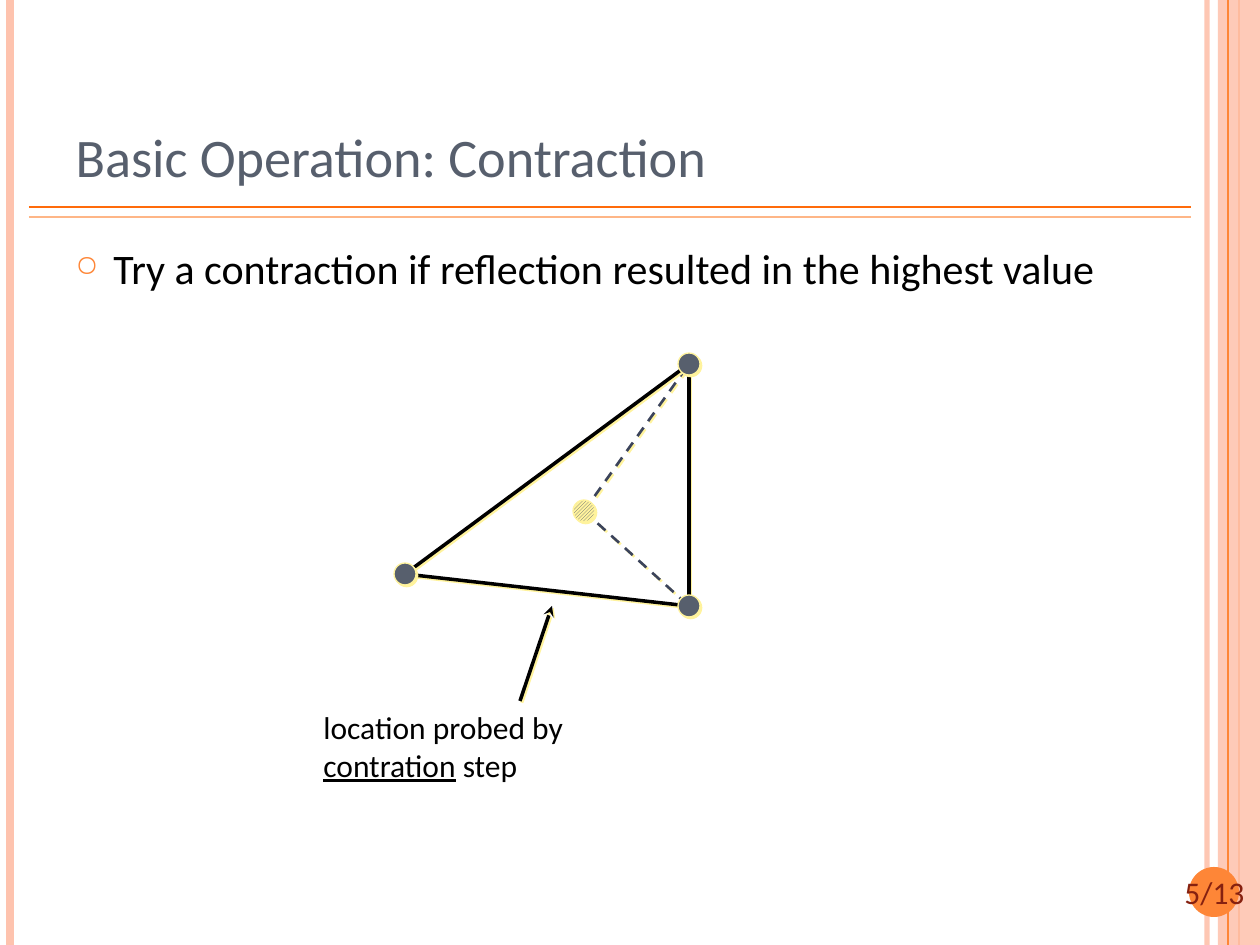
from dataclasses import dataclass
from itertools import combinations

from lxml.etree import SubElement
from pptx import Presentation
from pptx.dml.color import RGBColor
from pptx.enum.dml import MSO_LINE, MSO_PATTERN
from pptx.enum.shapes import MSO_CONNECTOR, MSO_SHAPE
from pptx.enum.text import MSO_ANCHOR, MSO_AUTO_SIZE, PP_ALIGN
from pptx.oxml.ns import qn
from pptx.util import Emu, Pt

PX_PER_INCH = 126
WIDTH, HEIGHT = 1260, 945
TITLE_ONLY = 5


@dataclass(frozen=True)
class Theme:
    font: str = "Calibri"
    title_size: int = 31
    body_size: int = 24
    label_size: int = 18
    title: str = "575F6D"
    text: str = "000000"
    number: str = "862110"
    accent: str = "FE8637"
    accent_dark: str = "FF6B0A"
    accent_light: str = "FEB687"
    band: str = "FEC3AE"
    vertex: str = "575F6D"
    glow: str = "FFF39D"
    dashed: str = "3B435B"


THEME = Theme()


def px(value):
    return Emu(round(value * 914400 / PX_PER_INCH))


def rgb(color):
    return RGBColor.from_string(color)


def set_opacity(shape, percent):
    color = next(shape.element.spPr.iter(qn("a:srgbClr")))
    SubElement(color, qn("a:alpha"), val=str(percent * 1000))


def set_effects(shape, shadow):
    properties = shape.element.spPr
    effects = properties.find(qn("a:effectLst"))
    if effects is None:
        effects = SubElement(properties, qn("a:effectLst"))
    if shadow:
        outer = SubElement(effects, qn("a:outerShdw"), blurRad="0",
                           dist=str(Pt(1.4)), dir="2700000", algn="ctr", rotWithShape="0")
        SubElement(outer, qn("a:srgbClr"), val=THEME.glow)


def add_line(shapes, start, end, color, width, dash=None, arrow=False, shadow=False):
    line = shapes.add_connector(MSO_CONNECTOR.STRAIGHT, *map(px, (*start, *end)))
    line.line.color.rgb = rgb(color)
    line.line.width = Pt(width)
    if dash:
        line.line.dash_style = dash
    if arrow:
        SubElement(line.element.spPr.find(qn("a:ln")), qn("a:tailEnd"), type="stealth")
    set_effects(line, shadow)
    return line


def add_filled(shapes, kind, left, top, width, height, color):
    shape = shapes.add_shape(kind, *map(px, (left, top, width, height)))
    shape.shadow.inherit = False
    shape.fill.solid()
    shape.fill.fore_color.rgb = rgb(color)
    shape.line.fill.background()
    return shape


def add_vertex(shapes, center, radius=11):
    x, y = center
    vertex = add_filled(shapes, MSO_SHAPE.OVAL, x - radius, y - radius,
                        2 * radius, 2 * radius, THEME.vertex)
    vertex.line.color.rgb = rgb(THEME.glow)
    vertex.line.width = Pt(0.75)
    set_effects(vertex, True)
    return vertex


def format_runs(paragraph, size, color):
    for run in paragraph.runs:
        run.font.name = THEME.font
        run.font.size = Pt(size)
        run.font.color.rgb = rgb(color)


def add_text(shapes, text, left, top, width, height):
    box = shapes.add_textbox(*map(px, (left, top, width, height)))
    box.text_frame.word_wrap = True
    box.text_frame.text = text
    return box.text_frame.paragraphs[0]


def add_decoration(shapes):
    def add_vertical(x, color, width):
        return add_line(shapes, (x, 0), (x, HEIGHT), color, width)

    set_opacity(add_vertical(1207, THEME.band, 3), 93)
    add_vertical(10, THEME.band, 4.5)
    add_vertical(1239, THEME.accent, 1.5)
    band = add_filled(shapes, MSO_SHAPE.RECTANGLE, 1218, 0, WIDTH - 1218, HEIGHT, THEME.band)
    set_opacity(band, 87)
    add_vertical(1228, THEME.accent, 0.75)
    for y, color in ((207, THEME.accent_dark), (217, THEME.accent_light)):
        add_line(shapes, (29, y), (1191, y), color, 1)


def add_page_number(shapes, text):
    add_filled(shapes, MSO_SHAPE.OVAL, 1189, 867, 50, 50, THEME.accent)
    paragraph = add_text(shapes, text, 1157, 867, 115, 50)
    paragraph.alignment = PP_ALIGN.CENTER
    format_runs(paragraph, THEME.label_size, THEME.number)


def set_title(title, text):
    title.left, title.top, title.width, title.height = map(px, (63, 38, 1029, 157))
    frame = title.text_frame
    frame.text = text
    frame.auto_size = MSO_AUTO_SIZE.NONE
    frame.vertical_anchor = MSO_ANCHOR.BOTTOM
    paragraph = frame.paragraphs[0]
    paragraph.alignment = PP_ALIGN.LEFT
    format_runs(paragraph, THEME.title_size, THEME.title)


def add_bullet(shapes, text):
    paragraph = add_text(shapes, text, 63, 236, 1063, 656)
    properties = paragraph._p.get_or_add_pPr()
    properties.set("marL", str(px(38)))
    properties.set("indent", str(-px(38)))
    color = SubElement(properties, qn("a:buClr"))
    SubElement(color, qn("a:srgbClr"), val=THEME.accent)
    SubElement(properties, qn("a:buSzPct"), val="70000")
    SubElement(properties, qn("a:buChar"), char="○")
    format_runs(paragraph, THEME.body_size, THEME.text)


def add_simplex(shapes):
    left, bottom, top = vertices = (405, 574), (689, 606), (689, 364)
    probe = (584, 511)
    for vertex in (bottom, top):
        add_line(shapes, probe, vertex, THEME.dashed, 1.5, dash=MSO_LINE.DASH, shadow=True)
    fill = add_vertex(shapes, probe).fill
    fill.patterned()
    fill.pattern = MSO_PATTERN.LIGHT_UPWARD_DIAGONAL
    fill.fore_color.rgb = rgb(THEME.vertex)
    fill.back_color.rgb = rgb(THEME.glow)

    triangle = shapes.add_group_shape().shapes
    for start, end in combinations(vertices, 2):
        add_line(triangle, start, end, THEME.text, 2, shadow=True)
    for vertex in vertices:
        add_vertex(triangle, vertex)


def add_callout(shapes):
    paragraph = add_text(shapes, "location probed by\v", 311, 702, 360, 113)
    for text, underline in (("contration", True), (" step", False)):
        run = paragraph.add_run()
        run.text = text
        run.font.underline = underline
    format_runs(paragraph, THEME.label_size, THEME.text)
    add_line(shapes, (520, 701), (552, 606), THEME.text, 2, arrow=True, shadow=True)


def main():
    presentation = Presentation()
    presentation.slide_width, presentation.slide_height = px(WIDTH), px(HEIGHT)
    slide = presentation.slides.add_slide(presentation.slide_layouts[TITLE_ONLY])
    shapes = slide.shapes
    add_decoration(shapes)
    add_page_number(shapes, "5/13")
    set_title(shapes.title, "Basic Operation: Contraction")
    add_bullet(shapes, "Try a contraction if reflection resulted in the highest value")
    add_simplex(shapes)
    add_callout(shapes)
    presentation.save("out.pptx")


if __name__ == "__main__":
    main()
